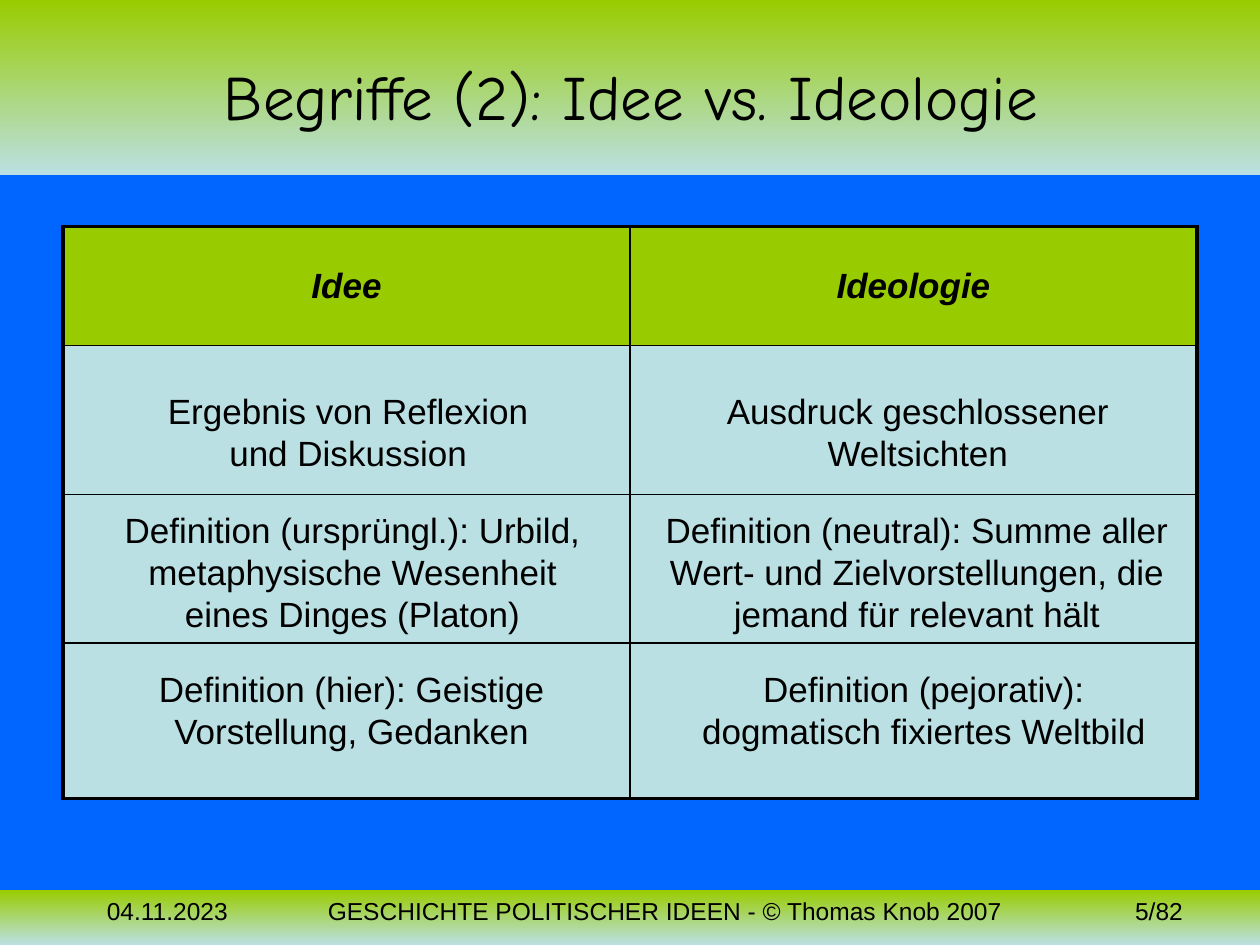
from typing import NamedTuple

from lxml import etree
from pptx import Presentation
from pptx import util as u
from pptx.dml.color import RGBColor
from pptx.enum import shapes, text
from pptx.oxml.ns import qn

HUES = {"ink": "000000", "lime": "99CC00", "pale": "BBE0E3", "blue": "0066FF"}
LEFT, MID, RIGHT = text.PP_ALIGN.LEFT, text.PP_ALIGN.CENTER, text.PP_ALIGN.RIGHT
WIDE, HIGH = 720, 540


class Band(NamedTuple):
    top: float
    high: float


class Note(NamedTuple):
    left: float
    top: float
    wide: float
    high: float
    words: str
    size: float = 20
    align: text.PP_ALIGN = MID


BANDS = [Band(508.5, 31.5), Band(0, 100)]
HEADS = ["Idee", "Ideologie"]
ROWS = [68, 85, 85, 89]
NOTES = [
    Note(54, 508.5, 119, 31.5, "04.11.2023", 14, LEFT),
    Note(173, 508.5, 414, 31.5,
         "GESCHICHTE POLITISCHER IDEEN - © Thomas Knob 2007", 14),
    Note(604, 508.5, 79, 31.5, "5/82", 14, RIGHT),
    Note(399.5, 219, 250, 55.5, "Ausdruck geschlossener Weltsichten"),
    Note(88, 219, 222, 55.5, "Ergebnis von Reflexion und Diskussion"),
    Note(59.5, 287, 284, 79,
         "Definition (ursprüngl.): Urbild, metaphysische Wesenheit eines Dinges (Platon)"),
    Note(70.5, 378, 261, 79, "Definition (hier): Geistige Vorstellung, Gedanken"),
    Note(371, 287, 306, 79,
         "Definition (neutral): Summe aller Wert- und Zielvorstellungen, die jemand für relevant hält"),
    Note(394, 378, 268, 55.5, "Definition (pejorativ): dogmatisch fixiertes Weltbild"),
]


def tint(name: str) -> RGBColor:
    return RGBColor.from_string(HUES[name])


def write(frame, words: str, *, size: float = 20, face: str = "Arial",
          align=MID, bold: bool = False, slant: bool = False) -> None:
    frame.word_wrap = True
    para = frame.paragraphs[0]
    para.alignment = align
    run = para.add_run()
    run.text = words
    font = run.font
    font.name, font.size = face, u.Pt(size)
    font.bold, font.italic = bold, slant
    font.color.rgb = tint("ink")


def draw_band(slide, band: Band) -> None:
    box = slide.shapes.add_shape(shapes.MSO_SHAPE.RECTANGLE, 0, u.Pt(band.top),
                                 u.Pt(WIDE), u.Pt(band.high))
    box.shadow.inherit = False
    box.line.fill.background()
    box.fill.gradient()
    box.fill.gradient_angle = 270
    for stop, hue in zip(box.fill.gradient_stops, ("lime", "pale")):
        stop.color.rgb = tint(hue)


def draw_note(slide, note: Note) -> None:
    box = slide.shapes.add_textbox(u.Pt(note.left), u.Pt(note.top),
                                   u.Pt(note.wide), u.Pt(note.high))
    write(box.text_frame, note.words, size=note.size, align=note.align)


def set_edge(cell, side: str, width: float, spot: int) -> None:
    line = etree.Element(qn(f"a:ln{side}"), w=str(u.Pt(width)))
    fill = etree.SubElement(line, qn("a:solidFill"))
    etree.SubElement(fill, qn("a:srgbClr"), val=HUES["ink"])
    cell._tc.get_or_add_tcPr().insert(spot, line)


def draw_grid(slide) -> None:
    cols, last = len(HEADS), len(ROWS) - 1
    grid = slide.shapes.add_table(len(ROWS), cols, u.Pt(36), u.Pt(129.5),
                                  u.Pt(648), u.Pt(sum(ROWS))).table
    grid.first_row = grid.horz_banding = False
    for r, high in enumerate(ROWS):
        grid.rows[r].height = u.Pt(high)
        for c in range(cols):
            cell = grid.cell(r, c)
            cell.fill.solid()
            cell.fill.fore_color.rgb = tint("pale" if r else "lime")
            outer = {"L": c == 0, "R": c == cols - 1, "T": r == 0, "B": r == last}
            for spot, (side, edge) in enumerate(outer.items()):
                set_edge(cell, side, 2.25 if edge else 1, spot)
            if r == 0:
                cell.vertical_anchor = text.MSO_ANCHOR.MIDDLE
                write(cell.text_frame, HEADS[c], bold=True, slant=True)


def set_title(slide) -> None:
    title = slide.shapes.title
    title.left, title.top = u.Pt(36.5), u.Pt(9.5)
    title.width, title.height = u.Pt(648), u.Pt(90.5)
    title.text_frame.vertical_anchor = text.MSO_ANCHOR.MIDDLE
    write(title.text_frame, "Begriffe (2): Idee vs. Ideologie", size=36, face="Comic Neue")
    title.element.getparent().append(title.element)


def main() -> None:
    deck = Presentation()
    deck.slide_width, deck.slide_height = u.Pt(WIDE), u.Pt(HIGH)
    slide = deck.slides.add_slide(deck.slide_layouts[5])
    slide.background.fill.solid()
    slide.background.fill.fore_color.rgb = tint("blue")
    for band in BANDS:
        draw_band(slide, band)
    set_title(slide)
    draw_grid(slide)
    for note in NOTES:
        draw_note(slide, note)
    deck.save("out.pptx")


if __name__ == "__main__":
    main()
